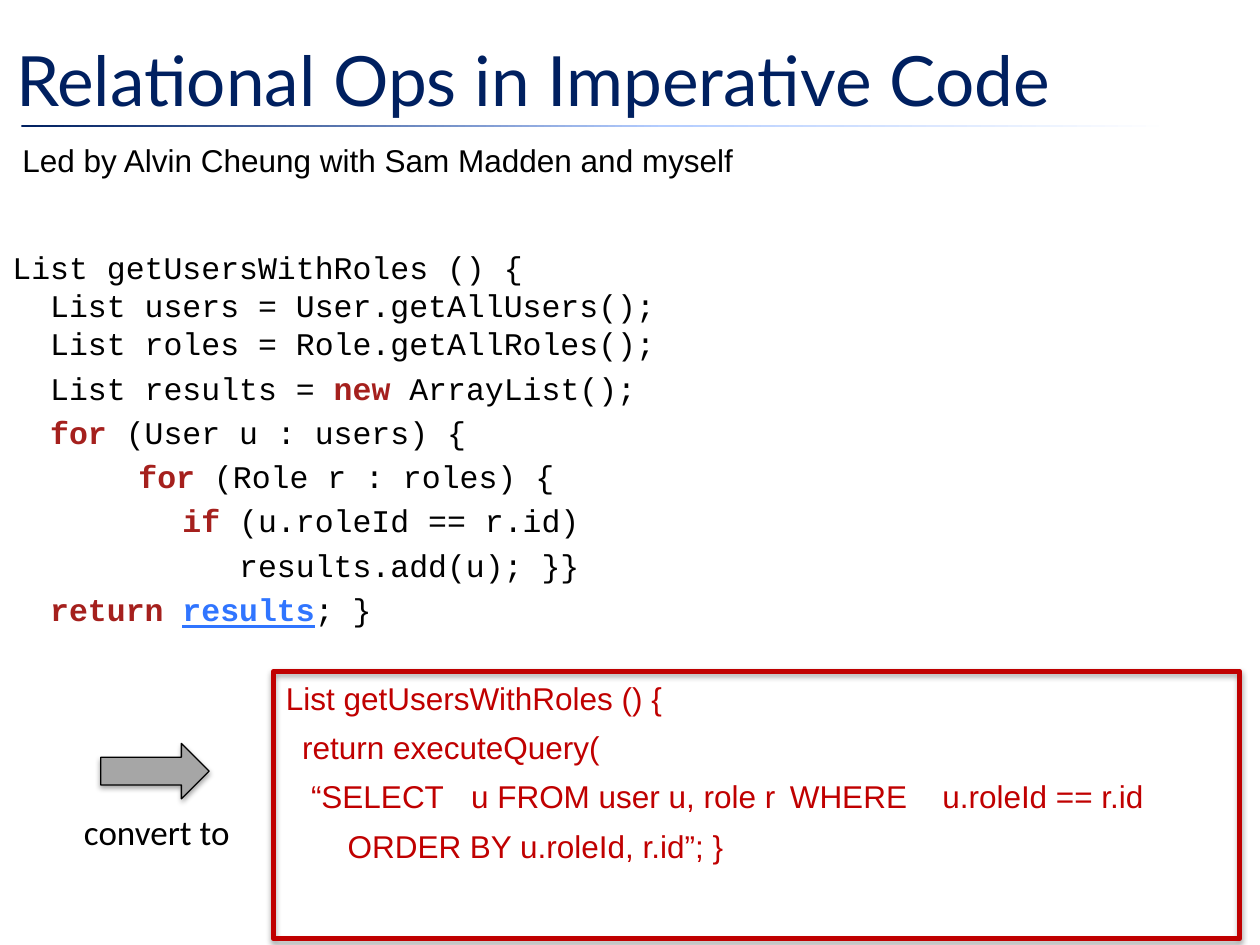
from copy import deepcopy

from lxml import etree
from pptx import Presentation
from pptx.dml.color import RGBColor
from pptx.enum.shapes import MSO_SHAPE
from pptx.enum.text import MSO_ANCHOR, PP_ALIGN
from pptx.oxml.ns import qn
from pptx.util import Inches, Pt

RECTANGLE, RIGHT_ARROW = MSO_SHAPE.RECTANGLE, MSO_SHAPE.RIGHT_ARROW
TOP, MIDDLE = MSO_ANCHOR.TOP, MSO_ANCHOR.MIDDLE
LEFT, CENTER = PP_ALIGN.LEFT, PP_ALIGN.CENTER

THEME = {
    "navy": "002060", "sky": "B4CDFF", "white": "FFFFFF", "black": "000000",
    "keyword": "A5201D", "link": "3075FF", "red": "C00000", "gray": "A6A6A6",
    "title_font": "Lato", "code_font": "Courier New",
    "text_font": "Arial", "label_font": "Calibri",
    "title_size": 39.6, "text_size": 18, "label_size": 20,
}

TITLE = "Relational Ops in Imperative Code"
CREDIT = "Led by Alvin Cheung with Sam Madden and myself"
LABEL = "convert to"
CODE = [
    (0, 0, [("List getUsersWithRoles () {", "plain")]),
    (0.3, 0, [("List users = User.getAllUsers();", "plain")]),
    (0.3, 0, [("List roles = Role.getAllRoles();", "plain")]),
    (0.3, 3.6, [("List results = ", "plain"), ("new ", "keyword"), ("ArrayList();", "plain")]),
    (0.3, 3.6, [("for ", "keyword"), ("(User u : users) {", "plain")]),
    (1.0, 3.6, [("for", "keyword"), (" (Role r : roles) {", "plain")]),
    (1.35, 3.6, [("if ", "keyword"), ("(u.roleId == r.id)", "plain")]),
    (1.8, 3.6, [("results.add(u); }}", "plain")]),
    (0.3, 3.6, [("return ", "keyword"), ("results", "link"), ("; }", "plain")]),
]
QUERY = [
    ([], "List getUsersWithRoles () {"),
    ([0.13], "\treturn executeQuery("),
    ([0.2, 1.47, 4.0, 5.21], "\t“SELECT\tu FROM user u, role r\tWHERE\tu.roleId == r.id"),
    ([0.49], "\tORDER BY u.roleId, r.id”; }"),
]
GRADIENT = [(0, "navy"), (0.52, "sky"), (0.93, "white")]


def color(name):
    return RGBColor.from_string(THEME[name])


def add_box(slide, left, top, width, height, anchor=TOP, wrap=True):
    box = slide.shapes.add_textbox(Inches(left), Inches(top), Inches(width), Inches(height))
    frame = box.text_frame
    frame.word_wrap = wrap
    frame.vertical_anchor = anchor
    return frame


def add_para(frame, first, line_height=None, space=0, align=LEFT):
    para = frame.paragraphs[0] if first else frame.add_paragraph()
    para.alignment = align
    para.space_before = Pt(space)
    if line_height:
        para.line_spacing = Pt(line_height)
    return para


def add_span(para, text, kind, shade, bold=False, underline=False):
    span = para.add_run()
    span.text = text
    span.font.name = THEME[kind + "_font"]
    span.font.size = Pt(THEME[kind + "_size"] if kind != "code" else THEME["text_size"])
    span.font.color.rgb = color(shade)
    span.font.bold = bold
    span.font.underline = underline


def set_tabs(para, stops):
    tabs = etree.SubElement(para._p.get_or_add_pPr(), qn("a:tabLst"))
    for stop in stops:
        etree.SubElement(tabs, qn("a:tab"), pos=str(Inches(stop)), algn="l")


def add_shape(slide, preset, left, top, width, height):
    shape = slide.shapes.add_shape(
        preset, Inches(left), Inches(top), Inches(width), Inches(height))
    shape.shadow.inherit = False
    return shape


def add_shadow(shape):
    effects = shape._element.spPr.find(qn("a:effectLst"))
    shadow = etree.SubElement(
        effects, qn("a:outerShdw"), blurRad=str(Pt(3.1)), dist=str(Pt(1.8)),
        dir="5400000", rotWithShape="0")
    shade = etree.SubElement(shadow, qn("a:srgbClr"), val=THEME["black"])
    etree.SubElement(shade, qn("a:alpha"), val="35000")


def add_title_rule(slide):
    rule = add_shape(slide, RECTANGLE, 0.17, 0.99, 9.83, 0.02)
    rule.line.fill.background()
    rule.fill.gradient()
    rule.fill.gradient_angle = 0
    stop_list = rule._element.spPr.find(qn("a:gradFill")).find(qn("a:gsLst"))
    stop_list.append(deepcopy(stop_list[-1]))
    for stop, (position, shade) in zip(rule.fill.gradient_stops, GRADIENT):
        stop.position = position
        stop.color.rgb = color(shade)


def add_code(slide):
    frame = add_box(slide, 0, 1.92, 9.83, 5.2)
    for index, (indent, space, spans) in enumerate(CODE):
        para = add_para(frame, index == 0, 21.7, space)
        para._p.get_or_add_pPr().set("marL", str(Inches(indent)))
        for text, role in spans:
            shade = "black" if role == "plain" else role
            add_span(para, text, "code", shade, role != "plain", role == "link")


def add_query(slide):
    frame = add_box(slide, 2.17, 5.25, 7.58, 2.25)
    for index, (stops, text) in enumerate(QUERY):
        para = add_para(frame, index == 0, 28.1)
        if stops:
            set_tabs(para, stops)
        add_span(para, text, "text", "red")
    border = add_shape(slide, RECTANGLE, 2.17, 5.33, 7.67, 2.12)
    border.fill.background()
    border.line.color.rgb = color("red")
    border.line.width = Pt(3)
    add_shadow(border)


def add_arrow(slide):
    arrow = add_shape(slide, RIGHT_ARROW, 0.8, 5.9, 0.86, 0.44)
    arrow.fill.solid()
    arrow.fill.fore_color.rgb = color("gray")
    arrow.line.color.rgb = color("black")
    arrow.line.width = Pt(0.75)
    add_shadow(arrow)
    frame = add_box(slide, 0.33, 6.36, 1.83, 0.48)
    frame.margin_left = frame.margin_right = Inches(0.14)
    frame.margin_top = frame.margin_bottom = Inches(0.07)
    add_span(add_para(frame, True, align=CENTER), LABEL, "label", "black")


def main():
    deck = Presentation()
    deck.slide_width, deck.slide_height = Inches(10), Inches(7.5)
    page = deck.slides.add_slide(deck.slide_layouts[6])
    add_title_rule(page)
    title = add_box(page, 0.03, 0, 9.5, 1.25, MIDDLE)
    add_span(add_para(title, True), TITLE, "title", "navy")
    add_code(page)
    add_query(page)
    add_arrow(page)
    credit = add_box(page, 0.08, 1.07, 5.9, 0.4, wrap=False)
    add_span(add_para(credit, True), CREDIT, "text", "black")
    deck.save("out.pptx")


if __name__ == "__main__":
    main()
